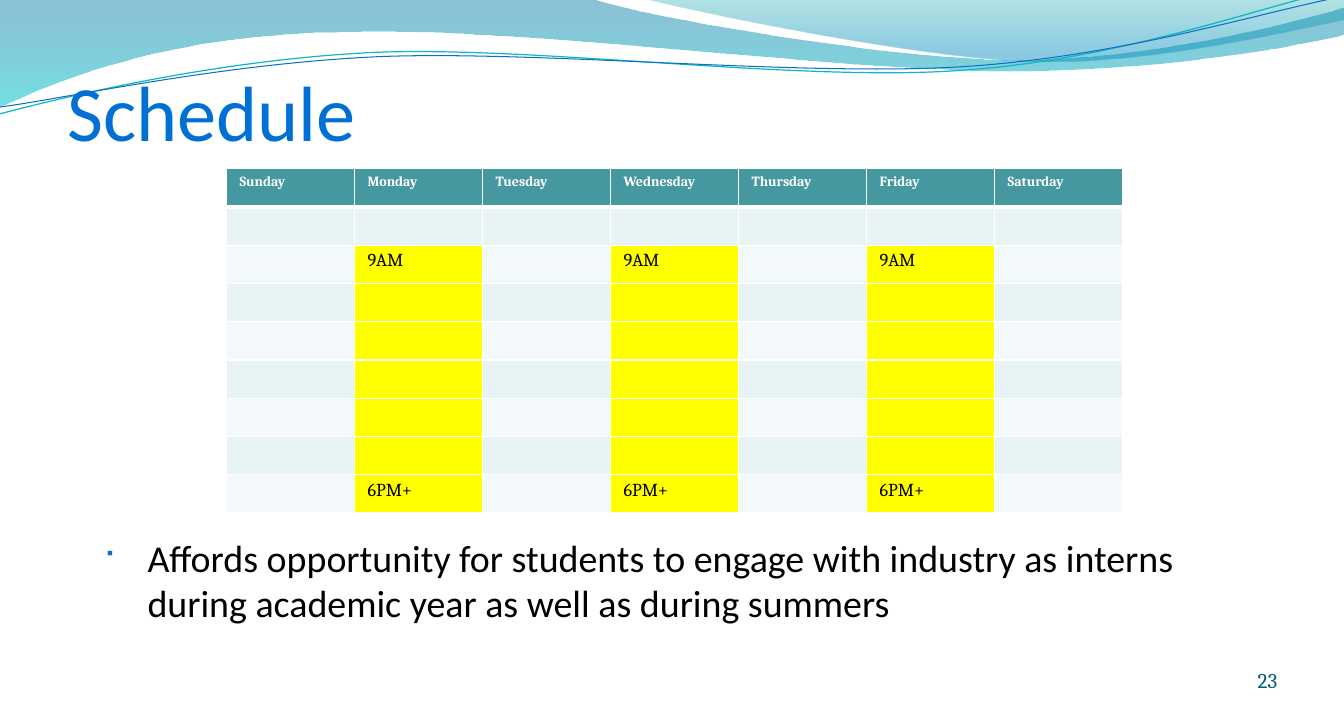
import math

from lxml import etree
from pptx import Presentation
from pptx import util as u
from pptx.dml.color import RGBColor
from pptx.enum import text
from pptx.oxml import ns

Inches, Pt = u.Inches, u.Pt
color = RGBColor.from_string


def add_wave(box, start, curves, tilt=0, closed=False):
    """Draw a chain of curves, placed as seen once the box is tilted; one point alone is a straight line."""
    left, top, width, height = box
    center_x, center_y = left + width / 2, top + height / 2
    cos, sin = math.cos(math.radians(tilt)), math.sin(math.radians(tilt))
    ends = [(Inches(c[-1][0]), Inches(c[-1][1])) for c in curves]
    builder = slide.shapes.build_freeform(Inches(start[0]), Inches(start[1]))
    builder.add_line_segments(ends, close=closed)
    wave = builder.convert_to_shape()
    for key, value in zip(("left", "top", "width", "height"), box):
        setattr(wave, key, Inches(value))
    wave.rotation = -tilt
    wave.shadow.inherit = False
    route = next(wave._element.iter(ns.qn("a:path")))
    route.set("w", str(Inches(width)))
    route.set("h", str(Inches(height)))
    for segment, points in zip(list(route), [[start], *curves]):
        if len(points) == 3:
            bend = etree.Element(ns.qn("a:cubicBezTo"))
            route.replace(segment, bend)
            segment = bend
        for child in list(segment):
            segment.remove(child)
        for x, y in points:
            dx, dy = x - center_x, y - center_y
            local_x = dx * cos - dy * sin + width / 2
            local_y = dx * sin + dy * cos + height / 2
            etree.SubElement(segment, ns.qn("a:pt"), x=str(Inches(local_x)), y=str(Inches(local_y)))
    return wave


def add_text(box, words, insets, anchor, font):
    label = slide.shapes.add_textbox(*[Inches(v) for v in box])
    frame = label.text_frame
    frame.word_wrap = True
    frame.vertical_anchor = anchor
    for side, inset in zip(("left", "top", "right", "bottom"), insets):
        setattr(frame, f"margin_{side}", Inches(inset))
    paragraph = frame.paragraphs[0]
    run = paragraph.add_run()
    run.text = words
    size, name, ink = font
    for key, value in {"size": Pt(size), "name": name}.items():
        setattr(run.font, key, value)
    run.font.color.rgb = color(ink)
    return paragraph


prs = Presentation()
prs.slide_width, prs.slide_height = Inches(13.3), Inches(7)
slide = prs.slides.add_slide(prs.slide_layouts[6])

# Waves across the top
bands = [
    ((-0.01, -0.01, 13.33, 1.06), (0, 0), [
        [(5.86, -0.01)],
        [(6.33, 0.16), (8.83, 0.59), (10.09, 0.59)],
        [(11.35, 0.59), (12.75, 0.24), (13.3, 0.08)],
        [(13.31, 0.34)],
        [(13.08, 0.41), (11.57, 0.71), (9.92, 0.7)],
        [(8.27, 0.7), (5.08, 0.26), (3.42, 0.32)],
        [(1.72, 0.33), (0.61, 0.77), (-0.01, 1.06)],
        [(0, 0)],
    ], [(0, "0074A1", 45), (1, "00C6CF", 55)]),
    ((6.37, -0.01, 6.93, 0.65), (6.37, -0.01), [
        [(6.77, 0.1), (9.07, 0.58), (10.22, 0.61)],
        [(11.38, 0.64), (12.79, 0.3), (13.3, 0.2)],
        [(13.3, 0)],
        [(6.37, -0.01)],
    ], [(0, "00A1A9", 30), (0.8, "008BBF", 45)]),
]
for box, start, curves, stops in bands:
    band = add_wave(box, start, curves, closed=True)
    band.line.fill.background()
    band.fill.gradient()
    band.fill.gradient_angle = 270
    for stop, (position, tint, _) in zip(band.fill.gradient_stops, stops):
        stop.position = position
        stop.color.rgb = color(tint)
    for rgb, (_, _, opacity) in zip(band._element.spPr.iter(ns.qn("a:srgbClr")), stops):
        etree.SubElement(rgb, ns.qn("a:alpha"), val=str(opacity * 1000))

strands = [
    ((-0.03, 0.21, 13.33, 0.66), (-0.01, 1.13), [
        [(0.64, 0.96), (2.1, 0.6), (3.68, 0.52)],
        [(5.26, 0.45), (7.87, 0.81), (9.47, 0.7)],
        [(11.07, 0.6), (12.49, 0.06), (13.28, -0.11)],
    ], "0AB8BF", 0.85),
    ((-0.02, 0.28, 13.35, 0.54), (0, 1.06), [
        [(0.62, 0.98), (2.18, 0.63), (3.77, 0.56)],
        [(5.36, 0.5), (7.94, 0.76), (9.53, 0.66)],
        [(11.12, 0.56), (12.52, 0.11), (13.31, -0.04)],
    ], "0F6FC6", 0.75),
]
for box, start, curves, tint, width in strands:
    strand = add_wave(box, start, curves, tilt=2.7)
    strand.fill.background()
    strand.line.color.rgb = color(tint)
    strand.line.width = Pt(width)

# Title and page number
bottom, top = text.MSO_ANCHOR.BOTTOM, text.MSO_ANCHOR.TOP
add_text((0.67, 0.72, 11.97, 0.84), "Schedule", (0, 0.06, 0, 0), bottom,
         (55.8, "Calibri", "0070D5"))
page = add_text((11.53, 6.49, 1.11, 0.37), "23", (0, 0, 0, 0), bottom,
                (15, "Cambria", "045D75"))
page.alignment = text.PP_ALIGN.RIGHT

# Weekly timetable
days = ["Sunday", "Monday", "Tuesday", "Wednesday", "Thursday", "Friday", "Saturday"]
class_days = {"Monday", "Wednesday", "Friday"}
class_times = {2: "9AM", 8: "6PM+"}
margins = {"margin_left": 0.13, "margin_right": 0.13, "margin_top": 0.05, "margin_bottom": 0.05}
row_count = 9
timetable = slide.shapes.add_table(row_count, len(days), Inches(2.24), Inches(1.67),
                                   Inches(8.87), Inches(3.41)).table
for row in range(row_count):
    for column, day in enumerate(days):
        cell = timetable.cell(row, column)
        in_class = day in class_days and row >= 2
        if row == 0:
            words, fill, size, ink = day, "4597A0", 10, "FFFFFF"
        else:
            words = class_times.get(row, "") if in_class else ""
            fill = "FFFF00" if in_class else ("E7F3F4" if row % 2 else "F3F9FA")
            size, ink = 13, "000000"
        for key, value in margins.items():
            setattr(cell, key, Inches(value))
        paragraph = cell.text_frame.paragraphs[0]
        if words:
            run = paragraph.add_run()
            run.text = words
            for key, value in {"size": Pt(size), "name": "Cambria", "bold": row == 0}.items():
                setattr(run.font, key, value)
            run.font.color.rgb = color(ink)
        else:
            etree.SubElement(paragraph._p, ns.qn("a:endParaRPr"), sz=str(size * 100))
        cell.fill.solid()
        cell.fill.fore_color.rgb = color(fill)
        thick_side = {0: "lnB", 1: "lnT"}.get(row)
        for index, side in enumerate(("lnL", "lnR", "lnT", "lnB")):
            border = etree.Element(ns.qn(f"a:{side}"), w=str(Pt(3 if side == thick_side else 1)))
            solid = etree.SubElement(border, ns.qn("a:solidFill"))
            etree.SubElement(solid, ns.qn("a:srgbClr"), val="FFFFFF")
            cell._tc.tcPr.insert(index, border)

# Benefit below the timetable
benefit = add_text(
    (0.79, 5.17, 11.96, 0.98),
    "Affords opportunity for students to engage with industry as interns "
    "during academic year as well as during summers",
    (0.07, 0.12, 0.12, 0.06), top, (27, "Calibri", "000000"))
properties = benefit._p.get_or_add_pPr()
for key, value in {"marL": 0.6, "indent": -0.44}.items():
    properties.set(key, str(Inches(value)))
bullet_color = etree.SubElement(properties, ns.qn("a:buClr"))
etree.SubElement(bullet_color, ns.qn("a:srgbClr"), val="0F6FC6")
etree.SubElement(properties, ns.qn("a:buSzPct"), val="80000")
etree.SubElement(properties, ns.qn("a:buFont"), typeface="Wingdings")
etree.SubElement(properties, ns.qn("a:buChar"), char="■")

prs.save("out.pptx")
